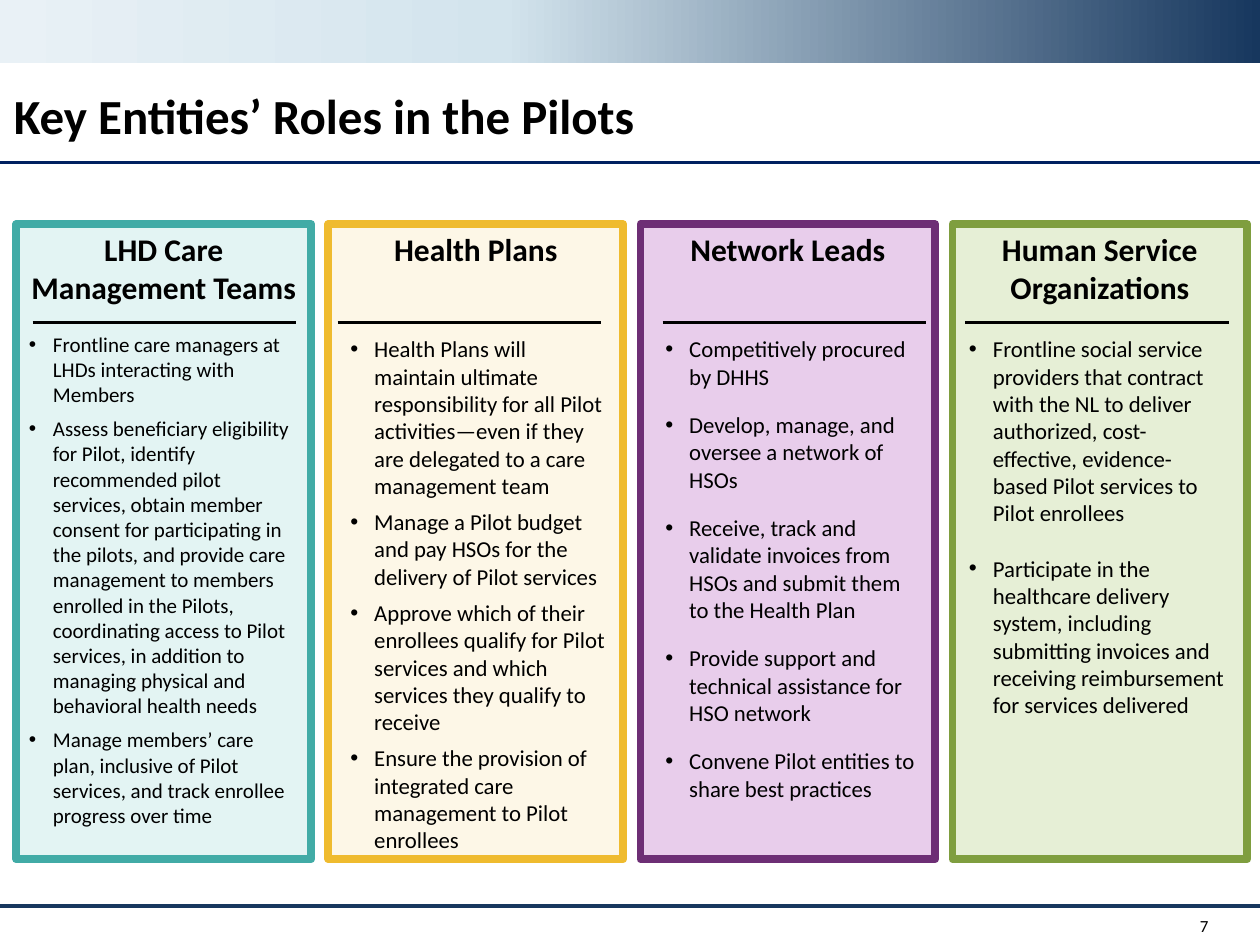
"""Build the slide on the roles of the key entities in the pilots."""
from dataclasses import dataclass

from lxml import etree
from pptx import Presentation
from pptx.dml.color import RGBColor
from pptx.enum.shapes import MSO_CONNECTOR, MSO_SHAPE
from pptx.enum.text import MSO_ANCHOR, MSO_AUTO_SIZE, PP_ALIGN
from pptx.oxml.ns import qn
from pptx.util import Inches, Pt

RECTANGLE = MSO_SHAPE.RECTANGLE
STRAIGHT = MSO_CONNECTOR.STRAIGHT
TOP, MIDDLE = MSO_ANCHOR.TOP, MSO_ANCHOR.MIDDLE
LEFT, CENTER, RIGHT = PP_ALIGN.LEFT, PP_ALIGN.CENTER, PP_ALIGN.RIGHT
FIT_SHAPE, NO_FIT = MSO_AUTO_SIZE.SHAPE_TO_FIT_TEXT, MSO_AUTO_SIZE.NONE

FONT = "Calibri"
COMPARISON_LAYOUT = 4
BLACK = RGBColor(0x00, 0x00, 0x00)
NAVY = RGBColor(0x17, 0x37, 0x5E)
DARK_BLUE = RGBColor(0x00, 0x20, 0x60)
PALE_BLUE = RGBColor(0xD3, 0xE4, 0xED)
MIST = RGBColor(0xE9, 0xF1, 0xF6)
TEAL, PALE_TEAL = RGBColor(0x41, 0xAB, 0xA6), RGBColor(0xE3, 0xF4, 0xF3)
GOLD, CREAM = RGBColor(0xEF, 0xBB, 0x2F), RGBColor(0xFD, 0xF7, 0xE7)
PURPLE, LILAC = RGBColor(0x6D, 0x2E, 0x75), RGBColor(0xE8, 0xCD, 0xEB)
GREEN, PALE_GREEN = RGBColor(0x7F, 0x9E, 0x3F), RGBColor(0xE6, 0xEF, 0xD6)

CARD_LEFT, CARD_TOP, CARD_WIDTH, CARD_HEIGHT = 0.13, 1.78, 2.34, 5.04
CARD_STEP = 7.43 / 3
RULE_TOP, RULE_WIDTH = 2.56, 2.09


@dataclass
class Entity:
    """Describe one column of the slide."""

    name: str
    line: RGBColor
    fill: RGBColor
    rule_left: float
    list_box: tuple
    size: float
    space_after: float
    roles: list


ENTITIES = [
    Entity("LHD Care Management Teams", TEAL, PALE_TEAL, 0.26, (0.13, 2.58, 2.34, 4.18), 12, 5, [
        "Frontline care managers at LHDs interacting with Members",
        "Assess beneficiary eligibility for Pilot, identify recommended pilot services, "
        "obtain member consent for participating in the pilots, and provide care management "
        "to members enrolled in the Pilots, coordinating access to Pilot services, in "
        "addition to managing physical and behavioral health needs",
        "Manage members’ care plan, inclusive of Pilot services, and track enrollee "
        "progress over time",
    ]),
    Entity("Health Plans", GOLD, CREAM, 2.68, (2.68, 2.61, 2.24, 4.29), 13, 5, [
        "Health Plans will maintain ultimate responsibility for all Pilot activities—even "
        "if they are delegated to a care management team",
        "Manage a Pilot budget and pay HSOs for the delivery of Pilot services",
        "Approve which of their enrollees qualify for Pilot services and which services "
        "they qualify to receive",
        "Ensure the provision of integrated care management to Pilot enrollees",
    ]),
    Entity("Network Leads", PURPLE, LILAC, 5.26, (5.18, 2.61, 2.24, 3.84), 13, 12, [
        "Competitively procured by DHHS",
        "Develop, manage, and oversee a network of HSOs",
        "Receive, track and validate invoices from HSOs and submit them to the Health Plan",
        "Provide support and technical assistance for HSO network",
        "Convene Pilot entities to share best practices",
    ]),
    Entity("Human Service Organizations", GREEN, PALE_GREEN, 7.66, (7.59, 2.61, 2.24, 3.38), 13, 16, [
        "Frontline social service providers that contract with the NL to deliver "
        "authorized, cost-effective, evidence-based Pilot services to Pilot enrollees",
        "Participate in the healthcare delivery system, including submitting invoices and "
        "receiving reimbursement for services delivered",
    ]),
]


def place(shape, left, top, width, height):
    """Move and size a shape in inches."""
    shape.left, shape.top = Inches(left), Inches(top)
    shape.width, shape.height = Inches(width), Inches(height)


def add_run(p, text, size, bold=False):
    """Add a black run to a paragraph."""
    r = p.add_run()
    r.text = text
    r.font.name = FONT
    r.font.size = Pt(size)
    r.font.bold = bold
    r.font.color.rgb = BLACK


def add_line(slide, left, top, width, color, weight):
    """Draw a horizontal line without a shadow."""
    line = slide.shapes.add_connector(
        STRAIGHT, Inches(left), Inches(top), Inches(left + width), Inches(top))
    line.line.color.rgb = color
    line.line.width = Pt(weight)
    etree.SubElement(line._element.spPr, qn("a:effectLst"))


def add_banner(slide):
    """Draw the gradient band along the top."""
    sp = slide.shapes.add_shape(RECTANGLE, 0, 0, Inches(10), Inches(0.5))
    sp.shadow.inherit = False
    sp.line.fill.background()
    sp.fill.gradient()
    sp.fill.gradient_angle = 0
    stops = sp._element.spPr.find(".//" + qn("a:gsLst"))
    for stop in list(stops):
        stops.remove(stop)
    for percent, color in ((0, MIST), (40, PALE_BLUE), (100, NAVY)):
        stop = etree.SubElement(stops, qn("a:gs"), pos=str(percent * 1000))
        etree.SubElement(stop, qn("a:srgbClr"), val=str(color))


def set_title(slide, text):
    """Fill the title placeholder."""
    title = slide.shapes.title
    place(title, 0, 0.67, 9.29, 0.6)
    tf = title.text_frame
    tf.vertical_anchor = TOP
    tf.auto_size = NO_FIT
    tf.margin_left = tf.margin_right = Inches(0.11)
    tf.margin_top = tf.margin_bottom = Inches(0.06)
    p = tf.paragraphs[0]
    p.alignment = LEFT
    p.line_spacing = 0.9
    add_run(p, text, 28, bold=True)


def add_page_number(slide, number):
    """Write the page number below the bottom line."""
    box = slide.shapes.add_textbox(Inches(9.08), Inches(7.19), Inches(0.62), Inches(0.31))
    tf = box.text_frame
    tf.word_wrap = True
    tf.vertical_anchor = MIDDLE
    tf.margin_left = tf.margin_right = Inches(0.11)
    tf.margin_top = tf.margin_bottom = Inches(0.06)
    p = tf.paragraphs[0]
    p.alignment = RIGHT
    add_run(p, number, 9.7)


def add_card(slide, left, entity):
    """Draw a framed card with its heading."""
    sp = slide.shapes.add_shape(
        RECTANGLE, Inches(left), Inches(CARD_TOP), Inches(CARD_WIDTH), Inches(CARD_HEIGHT))
    sp.shadow.inherit = False
    sp.fill.solid()
    sp.fill.fore_color.rgb = entity.fill
    sp.line.color.rgb = entity.line
    sp.line.width = Pt(4.5)
    tf = sp.text_frame
    tf.word_wrap = True
    tf.vertical_anchor = TOP
    p = tf.paragraphs[0]
    p.alignment = CENTER
    add_run(p, entity.name, 18, bold=True)


def add_bullet(p):
    """Give a paragraph a hanging round bullet."""
    pPr = p._p.get_or_add_pPr()
    pPr.set("marL", str(Inches(0.19)))
    pPr.set("indent", str(-Inches(0.19)))
    etree.SubElement(pPr, qn("a:buFont"), typeface="Arial")
    etree.SubElement(pPr, qn("a:buChar"), char="•")


def fill_roles(slide, body, entity):
    """Fill a body placeholder with roles and bring it to the front."""
    place(body, *entity.list_box)
    slide.shapes._spTree.append(body._element)
    tf = body.text_frame
    tf.word_wrap = True
    tf.vertical_anchor = TOP
    tf.auto_size = FIT_SHAPE
    for i, role in enumerate(entity.roles):
        p = tf.add_paragraph() if i else tf.paragraphs[0]
        p.alignment = LEFT
        p.space_before = Pt(0)
        p.space_after = Pt(entity.space_after)
        add_bullet(p)
        add_run(p, role, entity.size)


def main():
    """Build and save the slide."""
    prs = Presentation()
    prs.slide_width, prs.slide_height = Inches(10), Inches(7.5)
    slide = prs.slides.add_slide(prs.slide_layouts[COMPARISON_LAYOUT])
    bodies = list(slide.placeholders)[1:]
    add_banner(slide)
    add_line(slide, 0, 7.19, 10, NAVY, 2.25)
    add_line(slide, 0, 1.29, 10, DARK_BLUE, 2)
    set_title(slide, "Key Entities’ Roles in the Pilots")
    for i, (entity, body) in enumerate(zip(ENTITIES, bodies)):
        add_card(slide, CARD_LEFT + i * CARD_STEP, entity)
        add_line(slide, entity.rule_left, RULE_TOP, RULE_WIDTH, BLACK, 1.5)
        fill_roles(slide, body, entity)
    add_page_number(slide, "7")
    prs.save("out.pptx")


if __name__ == "__main__":
    main()
